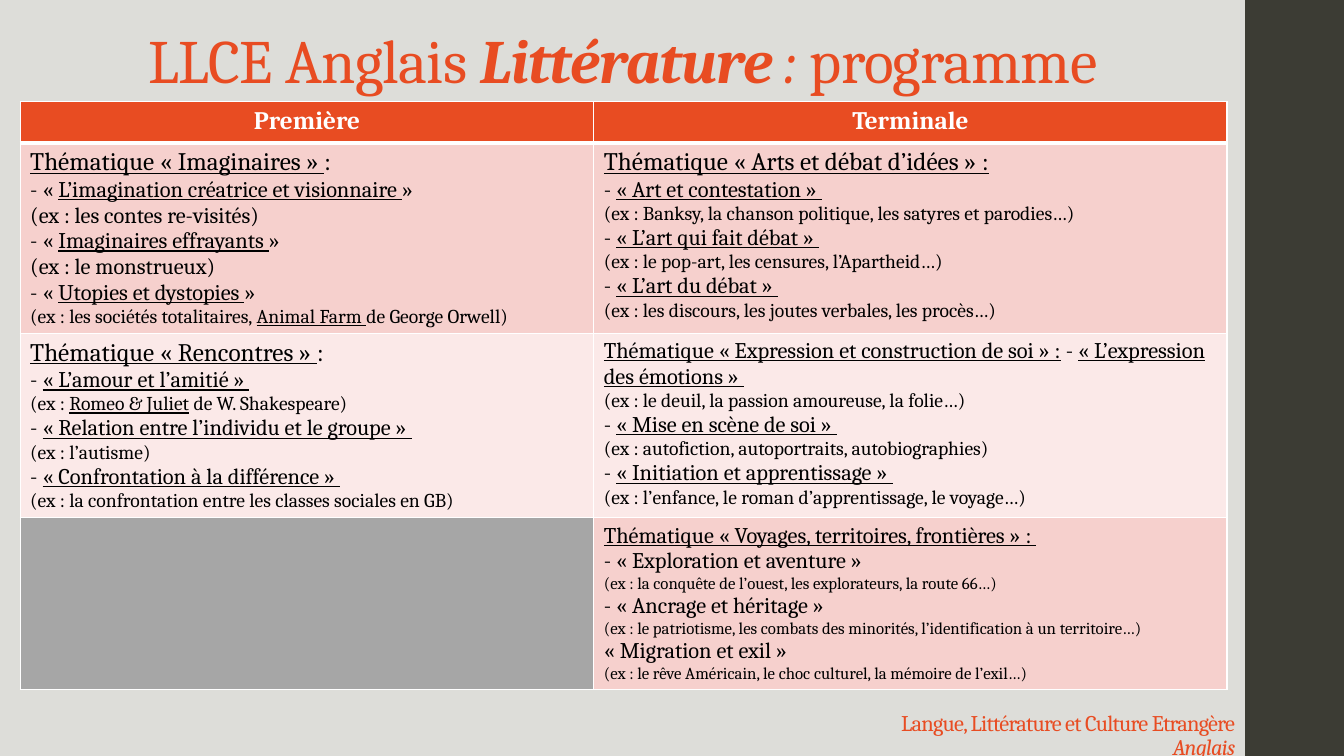
import pptx
import pptx.dml.color
import pptx.enum.text
import pptx.oxml
import pptx.oxml.ns
import pptx.util
from lxml import etree

Inches, Pt = pptx.util.Inches, pptx.util.Pt
ALIGN = pptx.enum.text.PP_ALIGN
qn = pptx.oxml.ns.qn

WIDTH, HEIGHT = 13.33, 7.5
FONT = "Cambria"
COLORS = {
    "background": "DDDDD9", "band": "3C3C34", "accent": "E84C22",
    "white": "FFFFFF", "black": "000000",
    "odd": "F6D0CD", "even": "FBE9E8", "empty": "A6A6A6",
}
COLUMNS = [5.69, 6.28]
ROWS = [0.41, 1.88, 1.83, 1.7]
HEADINGS = ["Première", "Terminale"]

# Each line is (size, text); underscores enclose underlined words.
THEMES = [
    [
        [(18, "_Thématique « Imaginaires » _: "),
         (16, "- « _L’imagination créatrice et visionnaire _» "),
         (16, "(ex : les contes re-visités) "),
         (16, "- « _Imaginaires effrayants _» "),
         (16, "(ex : le monstrueux) "),
         (16, "- « _Utopies et dystopies _» "),
         (14, "(ex : les sociétés totalitaires, _Animal Farm _de George Orwell)")],
        [(18, "_Thématique « Arts et débat d’idées » :_"),
         (16, "- _« Art et contestation » _"),
         (14, "(ex : Banksy, la chanson politique, les satyres et parodies…) "),
         (16, "- _« L’art qui fait débat » _"),
         (14, "(ex : le pop-art, les censures, l’Apartheid…) "),
         (16, "- _« L’art du débat » _"),
         (14, "(ex : les discours, les joutes verbales, les procès…)")],
    ],
    [
        [(18, "_Thématique « Rencontres » _: "),
         (16, "- _« L’amour et l’amitié » _"),
         (14, "(ex : _Romeo & Juliet_ de W. Shakespeare) "),
         (16, "- _« Relation entre l’individu et le groupe » _"),
         (14, "(ex : l’autisme) "),
         (16, "- _« Confrontation à la différence » _"),
         (14, "(ex : la confrontation entre les classes sociales en GB)")],
        [(16, "_Thématique « Expression et construction de soi » :_ - "
              "_« L’expression des émotions » _"),
         (14, "(ex : le deuil, la passion amoureuse, la folie…) "),
         (16, "- _« Mise en scène de soi » _"),
         (14, "(ex : autofiction, autoportraits, autobiographies) "),
         (16, "- _« Initiation et apprentissage » _"),
         (14, "(ex : l’enfance, le roman d’apprentissage, le voyage…)")],
    ],
    [
        [],
        [(16, "_Thématique « Voyages, territoires, frontières » : _"),
         (16, "- « Exploration et aventure » "),
         (12, "(ex : la conquête de l’ouest, les explorateurs, la route 66…) "),
         (16, "- « Ancrage et héritage » "),
         (12, "(ex : le patriotisme, les combats des minorités, "
              "l’identification à un territoire…) "),
         (16, "« Migration et exil » "),
         (12, "(ex : le rêve Américain, le choc culturel, la mémoire de l’exil…)")],
    ],
]


def rgb(name):
    return pptx.dml.color.RGBColor.from_string(COLORS[name])


def paint(fill, name):
    fill.solid()
    fill.fore_color.rgb = rgb(name)


def format_paragraph(paragraph, color, size=None, align=ALIGN.LEFT):
    paragraph.alignment = align
    paragraph.font.name = FONT
    paragraph.font.color.rgb = rgb(color)
    if size:
        paragraph.font.size = Pt(size)


def break_line(paragraph, size):
    """End a line with a break as tall as its text."""
    paragraph.add_line_break()
    etree.SubElement(paragraph._p[-1], qn("a:rPr"), sz=str(size * 100))


def add_tight_run(paragraph, text, bold=False, italic=False):
    run = paragraph.add_run()
    run.text = text
    run.font.bold, run.font.italic = bold, italic
    run._r.get_or_add_rPr().set("spc", "-50")


def place(shape, box):
    shape.left, shape.top, shape.width, shape.height = map(Inches, box)


def bottom_paragraph(shape, size, align):
    frame = shape.text_frame
    frame.word_wrap = True
    frame.auto_size = pptx.enum.text.MSO_AUTO_SIZE.NONE
    frame.vertical_anchor = pptx.enum.text.MSO_ANCHOR.BOTTOM
    paragraph = frame.paragraphs[0]
    format_paragraph(paragraph, "accent", size, align)
    paragraph.line_spacing = 0.9
    return paragraph


def add_band(slide, box):
    band = slide.shapes.add_shape(
        pptx.enum.shapes.MSO_SHAPE.RECTANGLE, *map(Inches, box))
    band.shadow.inherit = False
    paint(band.fill, "band")
    band.line.fill.background()


def fill_title(slide, box):
    title = slide.shapes.title
    place(title, box)
    heading = bottom_paragraph(title, 44, ALIGN.CENTER)
    add_tight_run(heading, "LLCE Anglais ")
    add_tight_run(heading, "Littérature", bold=True, italic=True)
    add_tight_run(heading, " : ", italic=True)
    add_tight_run(heading, "programme")


def add_subject(slide, box):
    subject = slide.shapes.add_textbox(*map(Inches, box))
    paragraph = bottom_paragraph(subject, 16, ALIGN.RIGHT)
    add_tight_run(paragraph, "Langue, Littérature et Culture Etrangère")
    break_line(paragraph, 16)
    add_tight_run(paragraph, "Anglais", italic=True)


def set_borders(cell, row):
    """White rules, thicker under the heading row."""
    widths = {"L": 1, "R": 1, "T": 3 if row == 1 else 1, "B": 3 if row == 0 else 1}
    for index, (side, width) in enumerate(widths.items()):
        rule = pptx.oxml.parse_xml(
            f'<a:ln{side} {pptx.oxml.ns.nsdecls("a")} w="{Pt(width)}"><a:solidFill>'
            f'<a:srgbClr val="{COLORS["white"]}"/></a:solidFill></a:ln{side}>')
        cell._tc.get_or_add_tcPr().insert(index, rule)


def write_theme(cell, lines):
    paragraph = cell.text_frame.paragraphs[0]
    format_paragraph(paragraph, "black")
    for number, (size, line) in enumerate(lines):
        if number:
            break_line(paragraph, lines[number - 1][0])
        for part, words in enumerate(line.split("_")):
            if words:
                run = paragraph.add_run()
                run.text = words
                run.font.size = Pt(size)
                run.font.underline = part % 2 == 1


def add_programme(slide, left, top):
    table = slide.shapes.add_table(
        len(ROWS), len(COLUMNS), Inches(left), Inches(top),
        Inches(sum(COLUMNS)), Inches(sum(ROWS))).table
    for column, width in zip(table.columns, COLUMNS):
        column.width = Inches(width)
    for row, height in zip(table.rows, ROWS):
        row.height = Inches(height)
    for column, heading in enumerate(HEADINGS):
        cell = table.cell(0, column)
        cell.text = heading
        paragraph = cell.text_frame.paragraphs[0]
        format_paragraph(paragraph, "white", 18, ALIGN.CENTER)
        paragraph.font.bold = True
        paint(cell.fill, "accent")
        set_borders(cell, 0)
    for row, themes in enumerate(THEMES, start=1):
        for column, lines in enumerate(themes):
            cell = table.cell(row, column)
            write_theme(cell, lines)
            shade = "odd" if row % 2 else "even"
            paint(cell.fill, shade if lines else "empty")
            set_borders(cell, row)


def main():
    deck = pptx.Presentation()
    deck.slide_width, deck.slide_height = Inches(WIDTH), Inches(HEIGHT)
    slide = deck.slides.add_slide(deck.slide_layouts.get_by_name("Title Only"))
    paint(slide.background.fill, "background")
    add_band(slide, (12.35, 0, WIDTH - 12.35, HEIGHT))
    fill_title(slide, (0.07, 0.1, 12.22, 0.91))
    add_subject(slide, (0.13, 6.14, 12.22, 1.45))
    add_programme(slide, 0.2, 1.01)
    deck.save("out.pptx")


if __name__ == "__main__":
    main()
